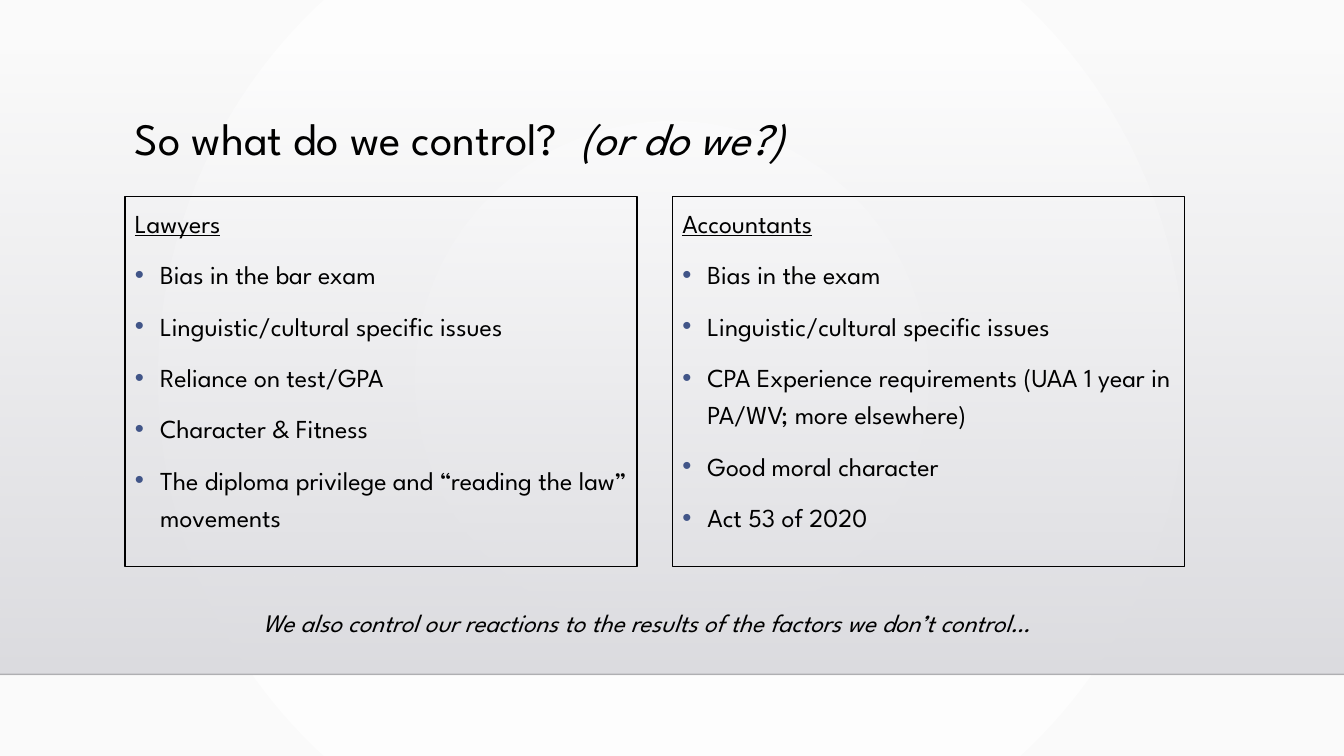
import lxml.etree
import pptx
import pptx.dml.color
import pptx.enum.shapes
import pptx.enum.text
import pptx.oxml.ns
import pptx.util

Pt = pptx.util.Pt
qn = pptx.oxml.ns.qn
ANCHOR = pptx.enum.text.MSO_ANCHOR
COLORS = {
    "text": "000000",
    "bullet": "415588",
    "floor": "000001",
    "center": "FFFFFF",
    "edge": "FAFAFA",
    "wall_top": "DCDCE0",
    "wall_bottom": "DEDEE2",
}
FONT = "League Spartan"
LEFT = 89.28
COLUMN_STEP = 390.96
COLUMNS = [
    ("Lawyers", [
        "Bias in the bar exam",
        "Linguistic/cultural specific issues",
        "Reliance on test/GPA",
        "Character & Fitness",
        "The diploma privilege and “reading the law” movements",
    ]),
    ("Accountants", [
        "Bias in the exam",
        "Linguistic/cultural specific issues",
        "CPA Experience requirements (UAA 1 year in PA/WV; more elsewhere)",
        "Good moral character",
        "Act 53 of 2020",
    ]),
]


def rgb(name):
    return pptx.dml.color.RGBColor.from_string(COLORS[name])


def add_run(paragraph, text, **font_format):
    run = paragraph.add_run()
    run.text = text
    run.font.color.rgb = rgb("text")
    for name, value in {"name": FONT, **font_format}.items():
        setattr(run.font, name, value)


presentation = pptx.Presentation()
presentation.slide_width = Pt(960)
presentation.slide_height = Pt(540)
slide = presentation.slides.add_slide(presentation.slide_layouts[6])

# Background and the shaded wall above the floor line
wall = slide.shapes.add_shape(
    pptx.enum.shapes.MSO_SHAPE.RECTANGLE, 0, Pt(36.72), Pt(960), Pt(444.96))
wall.shadow.inherit = False
wall.line.fill.background()
background_fill = slide.background.fill
for fill, names in ((background_fill, ("center", "edge")),
                    (wall.fill, ("wall_top", "wall_bottom"))):
    fill.gradient()
    for stop, name in zip(fill.gradient_stops, names):
        stop.color.rgb = rgb(name)
wall.fill.gradient_angle = 270

first_color = next(wall.element.spPr.iter(qn("a:srgbClr")))
lxml.etree.SubElement(first_color, qn("a:alpha"), val="0")

linear = next(slide.element.iter(qn("p:bgPr"))).find(".//" + qn("a:lin"))
radial = lxml.etree.Element(qn("a:path"), path="circle")
lxml.etree.SubElement(radial, qn("a:fillToRect"),
                      {side: "50000" for side in "ltrb"})
linear.getparent().replace(linear, radial)

floor = slide.shapes.add_connector(
    pptx.enum.shapes.MSO_CONNECTOR.STRAIGHT, 0, Pt(481.68), Pt(960), Pt(481.68))
floor.line.width = Pt(1)
floor.line.color.rgb = rgb("floor")
floor_color = next(floor.element.spPr.iter(qn("a:srgbClr")))
lxml.etree.SubElement(floor_color, qn("a:alpha"), val="20000")
lxml.etree.SubElement(floor.element.spPr, qn("a:effectLst"))

# Title
title = slide.shapes.add_textbox(Pt(LEFT), Pt(75.6), Pt(756), Pt(49.68))
title.text_frame.word_wrap = True
title.text_frame.vertical_anchor = ANCHOR.MIDDLE
paragraph = title.text_frame.paragraphs[0]
paragraph.line_spacing = 0.9
add_run(paragraph, "So what do we control?  ", size=Pt(32))
add_run(paragraph, "(or do we?)", size=Pt(32), italic=True)

# Two framed columns
for index, (heading, points) in enumerate(COLUMNS):
    column = slide.shapes.add_textbox(
        Pt(LEFT + index * COLUMN_STEP), Pt(140.4), Pt(365.76), Pt(264.24))
    column.line.color.rgb = rgb("text")
    column.line.width = Pt(1)
    frame = column.text_frame
    frame.word_wrap = True
    paragraph = frame.paragraphs[0]
    paragraph.line_spacing = 1.2
    add_run(paragraph, heading, size=Pt(18.5), underline=True)
    for point in points:
        paragraph = frame.add_paragraph()
        paragraph.line_spacing = 1.2
        paragraph.space_before = Pt(10)
        properties = paragraph._p.get_or_add_pPr()
        properties.set("marL", str(Pt(18)))
        properties.set("indent", str(-Pt(18)))
        bullet_color = lxml.etree.SubElement(properties, qn("a:buClr"))
        lxml.etree.SubElement(bullet_color, qn("a:srgbClr"), val=COLORS["bullet"])
        lxml.etree.SubElement(properties, qn("a:buFont"), typeface="Arial")
        lxml.etree.SubElement(properties, qn("a:buChar"), char="•")
        add_run(paragraph, point, size=Pt(18.5))

# Closing remark
remark = slide.shapes.add_textbox(Pt(LEFT), Pt(430.56), Pt(749.52), Pt(28.8))
remark.text_frame.word_wrap = True
paragraph = remark.text_frame.paragraphs[0]
paragraph.alignment = pptx.enum.text.PP_ALIGN.CENTER
add_run(
    paragraph,
    "We also control our reactions to the results of the factors we don’t control… ",
    size=Pt(18), italic=True)

presentation.save("out.pptx")
